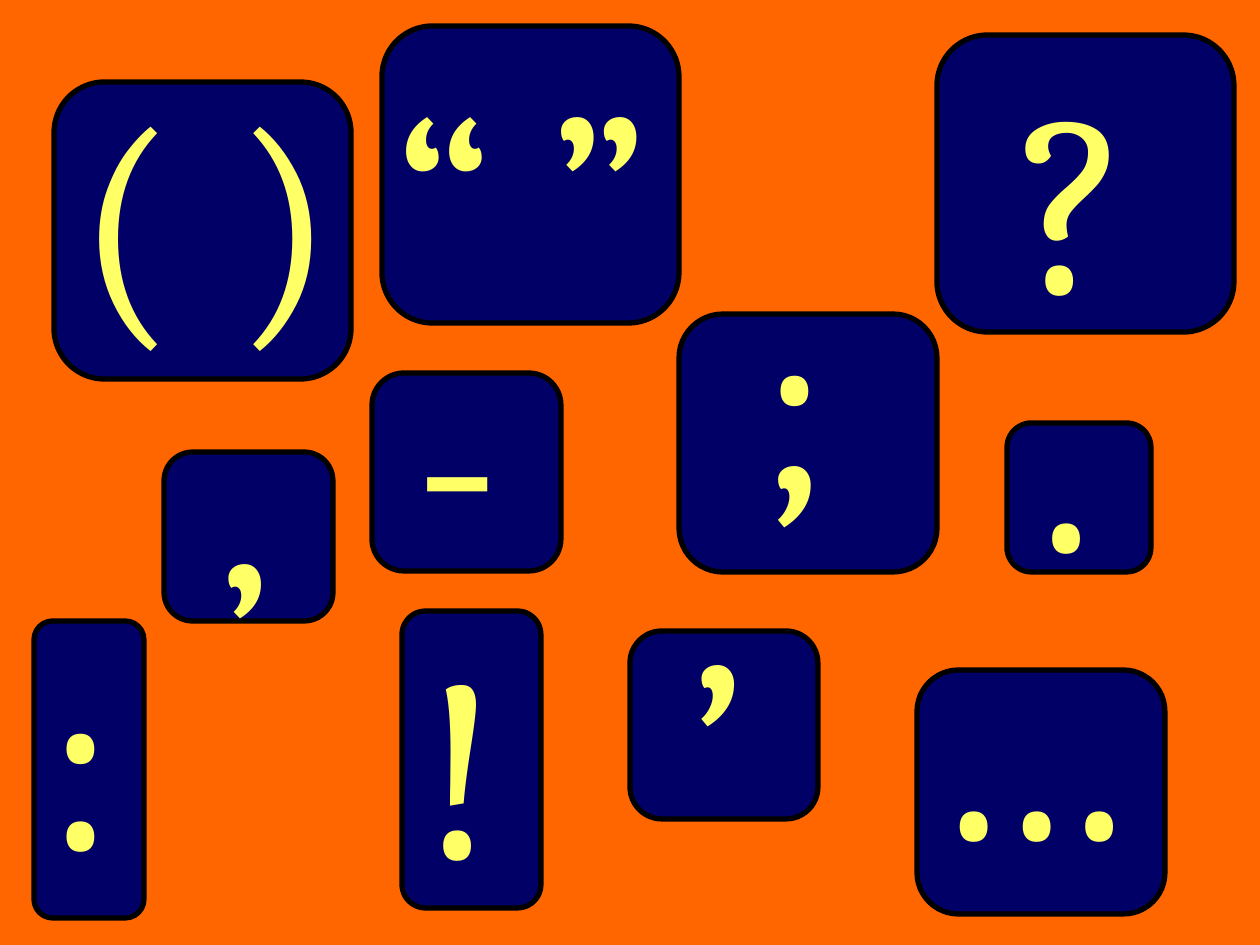
from pptx import Presentation
from pptx.dml.color import RGBColor
from pptx.enum.shapes import MSO_SHAPE
from pptx.enum.text import MSO_AUTO_SIZE as AutoSize
from pptx.util import Pt

PX = 914400 // 126
SLIDE_WIDTH, SLIDE_HEIGHT = 1260, 945
SYMBOL_WIDTH, SYMBOL_HEIGHT = 188, 328
COLORS = {
    "background": "FF6600",
    "card": "000066",
    "outline": "000000",
    "symbol": "FFFF66",
}

# symbol, card box (left, top, width, height), symbol offset in the card, symbol width
CARDS = [
    ("!", (402, 611, 139, 297), (10, -20), SYMBOL_WIDTH),
    (".", (1007, 423, 144, 149), (20, -139), SYMBOL_WIDTH),
    ("’", (164, 452, 169, 169), (39, 21), SYMBOL_WIDTH),
    (",", (630, 631, 188, 188), (49, -208), SYMBOL_WIDTH),
    ("“ ”", (382, 26, 297, 297), (0, 0), 328),
    ("…", (917, 670, 248, 244), (0, -98), 228),
    ("( )", (54, 82, 297, 297), (10, -37), 323),
    (":", (34, 621, 110, 297), (0, -39), SYMBOL_WIDTH),
    (";", (679, 314, 258, 258), (69, -90), SYMBOL_WIDTH),
    ("-", (372, 373, 189, 198), (30, -89), SYMBOL_WIDTH),
    ("?", (937, 35, 297, 297), (70, -9), SYMBOL_WIDTH),
]


def color(name):
    return RGBColor.from_string(COLORS[name])


def to_emu(*lengths):
    return [length * PX for length in lengths]


def add_card(slide, symbol, box, offset, symbol_width):
    """Group a rounded card with its punctuation mark."""
    group = slide.shapes.add_group_shape()
    card = group.shapes.add_shape(MSO_SHAPE.ROUNDED_RECTANGLE, *to_emu(*box))
    card.adjustments[0] = 0.17
    card.shadow.inherit = False
    card.fill.solid()
    card.fill.fore_color.rgb = color("card")
    card.line.color.rgb = color("outline")
    card.line.width = Pt(3)

    left, top = box[0] + offset[0], box[1] + offset[1]
    text_box = group.shapes.add_textbox(
        *to_emu(left, top, symbol_width, SYMBOL_HEIGHT))
    text_frame = text_box.text_frame
    text_frame.word_wrap = True
    text_frame.auto_size = AutoSize.SHAPE_TO_FIT_TEXT
    text_frame.text = symbol
    font = text_frame.paragraphs[0].runs[0].font
    font.name = "Cambria"
    font.size = Pt(150)
    font.color.rgb = color("symbol")


def main():
    presentation = Presentation()
    presentation.slide_width, presentation.slide_height = to_emu(
        SLIDE_WIDTH, SLIDE_HEIGHT)
    slide = presentation.slides.add_slide(presentation.slide_layouts[6])
    slide.background.fill.solid()
    slide.background.fill.fore_color.rgb = color("background")
    for card in CARDS:
        add_card(slide, *card)
    presentation.save("out.pptx")


if __name__ == "__main__":
    main()
